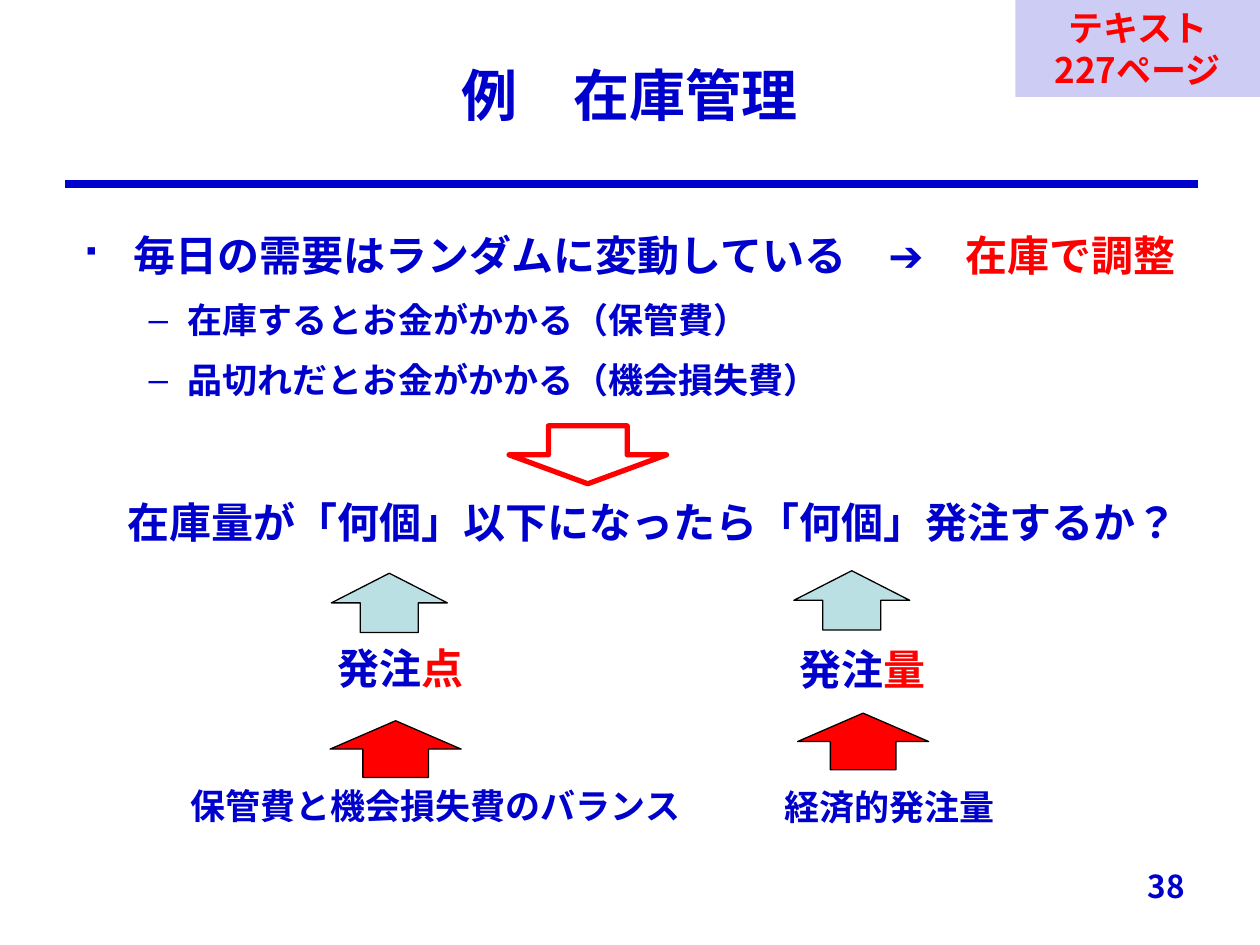
from lxml import etree
from pptx import Presentation
from pptx.dml.color import RGBColor
from pptx.enum import lang, shapes, text
from pptx.oxml.ns import qn
from pptx.util import Inches, Pt

FONT = "Noto Sans CJK JP"
BLUE = RGBColor(0x00, 0x00, 0xCC)
RED = RGBColor(0xFF, 0x00, 0x00)
PALE = RGBColor(0xBB, 0xE0, 0xE3)
WHITE = RGBColor(0xFF, 0xFF, 0xFF)
BLACK = RGBColor(0x00, 0x00, 0x00)
UP = shapes.MSO_SHAPE.UP_ARROW
DOWN = shapes.MSO_SHAPE.DOWN_ARROW


def add_run(p, words, size=24, color=BLUE):
    r = p.add_run()
    r.text = words
    r.font.size = Pt(size)
    r.font.bold = True
    r.font.name = FONT
    r.font.language_id = lang.MSO_LANGUAGE_ID.JAPANESE
    r.font.color.rgb = color
    etree.SubElement(r.font._element, qn("a:ea"), typeface=FONT)


def place(sp, left, top, width, height):
    sp.left, sp.top = Inches(left), Inches(top)
    sp.width, sp.height = Inches(width), Inches(height)


def format_paragraph(p, margin=0, hang=0, before=0, bullet=None, bullet_font="Arial", bullet_size=100):
    """Set spacing, indent and bullet; margin, hang and before are in inches."""
    p.line_spacing = 1.2
    p.space_before = Inches(before)
    p.space_after = Pt(0)
    pPr = p._p.get_or_add_pPr()
    pPr.set("marL", str(Inches(margin)))
    pPr.set("indent", str(Inches(-hang)))
    if bullet:
        etree.SubElement(pPr, qn("a:buSzPct"), val=str(bullet_size * 1000))
        etree.SubElement(pPr, qn("a:buFont"), typeface=bullet_font)
        etree.SubElement(pPr, qn("a:buChar"), char=bullet)
    else:
        etree.SubElement(pPr, qn("a:buNone"))


def add_title(slide, left, top, width, height):
    sp = slide.shapes.title
    place(sp, left, top, width, height)
    tf = sp.text_frame
    tf.vertical_anchor = text.MSO_ANCHOR.MIDDLE
    p = tf.paragraphs[0]
    p.alignment = text.PP_ALIGN.CENTER
    add_run(p, "例　在庫管理", size=32)


def add_rule(slide, left, top, width):
    line = slide.shapes.add_connector(
        shapes.MSO_CONNECTOR.STRAIGHT,
        Inches(left), Inches(top), Inches(left + width), Inches(top))
    line.line.color.rgb = BLUE
    line.line.width = Pt(4.5)
    etree.SubElement(line._element.spPr, qn("a:effectLst"))


def add_body(slide, left, top, width, height):
    sp = slide.placeholders[1]
    place(sp, left, top, width, height)
    tf = sp.text_frame
    tf.word_wrap = True
    tf.auto_size = text.MSO_AUTO_SIZE.NONE

    p = tf.paragraphs[0]
    format_paragraph(p, 0.38, 0.38, bullet="§", bullet_font="Wingdings", bullet_size=60)
    add_run(p, "毎日の需要はランダムに変動している　➔　")
    add_run(p, "在庫で調整", color=RED)

    for words in ("在庫するとお金がかかる（保管費）", "品切れだとお金がかかる（機会損失費）"):
        p = tf.add_paragraph()
        p.level = 1
        format_paragraph(p, 0.81, 0.31, before=0.08, bullet="–")
        add_run(p, words, size=20)

    p = tf.add_paragraph()
    format_paragraph(p, 0.33, before=0.68)
    add_run(p, "在庫量が「何個」以下になったら「何個」発注するか？")

    p = tf.add_paragraph()
    format_paragraph(p, 2, before=0.68)
    add_run(p, "発注")
    add_run(p, "点", color=RED)

    p = tf.add_paragraph()
    format_paragraph(p, 0.83, before=0.66)
    add_run(p, "保管費と機会損失費のバランス", size=20)


def add_label(slide, left, top, width, height, words, size=24, ending=""):
    sp = slide.shapes.add_textbox(0, 0, 0, 0)
    place(sp, left, top, width, height)
    sp.text_frame.word_wrap = True
    p = sp.text_frame.paragraphs[0]
    format_paragraph(p)
    add_run(p, words, size=size)
    if ending:
        add_run(p, ending, size=size, color=RED)


def add_arrow(slide, kind, box, fill, line=BLACK, weight=0.75, rotation=0):
    sp = slide.shapes.add_shape(kind, *map(Inches, box))
    sp.shadow.inherit = False
    sp.rotation = rotation
    sp.fill.solid()
    sp.fill.fore_color.rgb = fill
    sp.line.color.rgb = line
    sp.line.width = Pt(weight)


def add_arrows(slide):
    add_arrow(slide, DOWN, (4.04, 3.38, 1.25, 0.46), WHITE, RED, 3)
    for left, top in ((2.63, 4.55), (6.3, 4.53)):
        add_arrow(slide, UP, (left, top, 0.92, 0.47), PALE)
    for left, top in ((2.62, 5.72), (6.33, 5.66)):
        add_arrow(slide, DOWN, (left, top, 1.04, 0.45), RED, rotation=180)


def add_page_badge(slide, left, top, width, height):
    sp = slide.shapes.add_shape(shapes.MSO_SHAPE.RECTANGLE, 0, 0, 0, 0)
    place(sp, left, top, width, height)
    sp.shadow.inherit = False
    sp.line.fill.background()
    sp.fill.solid()
    sp.fill.fore_color.rgb = BLUE
    color = sp._element.spPr.find(qn("a:solidFill"))[0]
    etree.SubElement(color, qn("a:alpha"), val="20000")
    tf = sp.text_frame
    for i, words in enumerate(("テキスト", "227ページ")):
        p = tf.add_paragraph() if i else tf.paragraphs[0]
        p.alignment = text.PP_ALIGN.CENTER
        add_run(p, words, size=20, color=RED)


def add_slide_number(slide, left, top, width, height):
    sp = slide.shapes.add_textbox(0, 0, 0, 0)
    place(sp, left, top, width, height)
    sp.text_frame.word_wrap = True
    p = sp.text_frame.paragraphs[0]
    p.alignment = text.PP_ALIGN.RIGHT
    add_run(p, "38", size=18)


def main():
    prs = Presentation()
    prs.slide_width, prs.slide_height = Inches(10), Inches(7.5)
    slide = prs.slides.add_slide(prs.slide_layouts[1])
    add_rule(slide, 0.52, 1.46, 8.99)
    add_title(slide, 0.75, 0.15, 8.5, 1.19)
    add_body(slide, 0.58, 1.69, 8.97, 5.28)
    add_label(slide, 6.25, 4.98, 1.4, 0.58, "発注", ending="量")
    add_label(slide, 6.13, 6.12, 2, 0.5, "経済的発注量", size=20)
    add_slide_number(slide, 7.42, 6.83, 2.08, 0.5)
    add_arrows(slide)
    add_page_badge(slide, 8.06, 0, 1.94, 0.77)
    prs.save("out.pptx")


if __name__ == "__main__":
    main()
